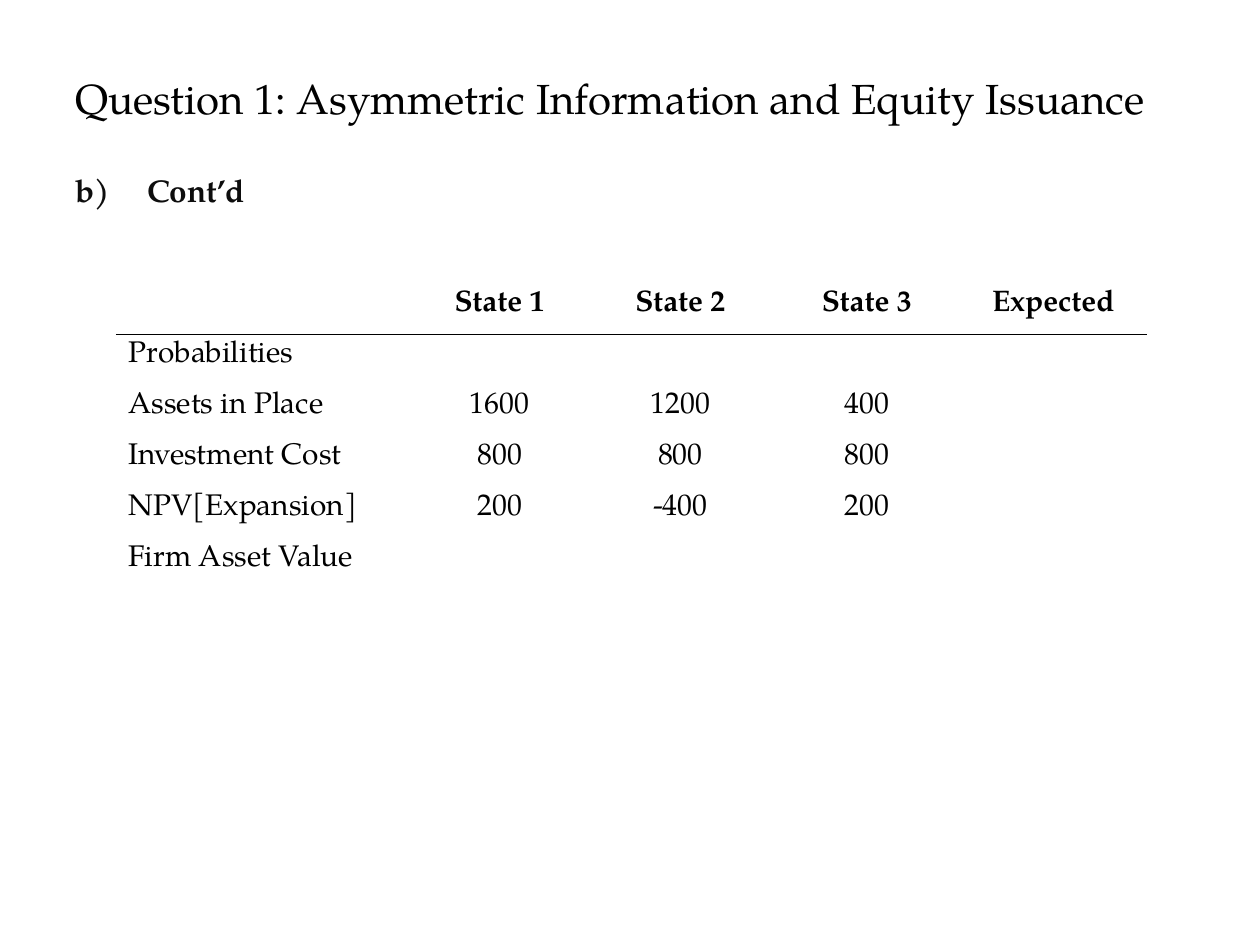
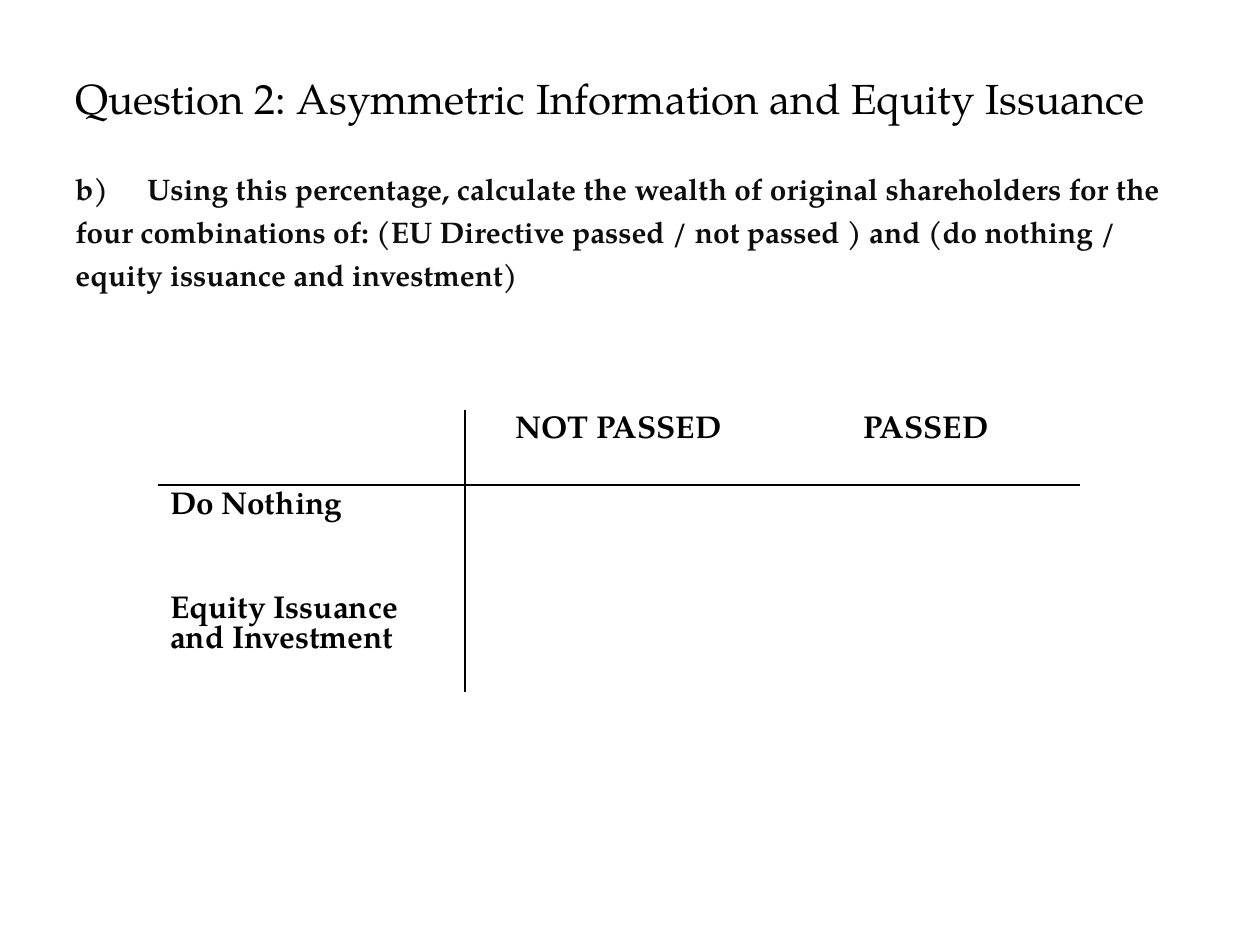
"""Build two exercise slides, each with a title, a question and a ruled table."""
from lxml import etree
from pptx import Presentation
from pptx.dml.color import RGBColor
from pptx.enum.text import MSO_ANCHOR, PP_ALIGN
from pptx.oxml.ns import qn
from pptx.util import Inches, Pt

LEFT, CENTER = PP_ALIGN.LEFT, PP_ALIGN.CENTER
TOP, MIDDLE = MSO_ANCHOR.TOP, MSO_ANCHOR.MIDDLE
W, H = Inches(10), Inches(7.5)
FONT = "TeX Gyre Pagella"
BLACK, INK = "000000", "0D0D0D"
NO_STYLE = "{2D5ABB26-0587-4C30-8999-92F81FD0307C}"


def style(p, size, color, bold=False, align=LEFT):
    """Set the font and alignment of a paragraph."""
    p.alignment = align
    p.font.name, p.font.size, p.font.bold = FONT, Pt(size), bold
    p.font.color.rgb = RGBColor.from_string(color)


def rule(cell, side):
    """Draw a thin black border on one side of a cell."""
    ln = etree.SubElement(cell._tc.get_or_add_tcPr(), qn("a:ln" + side), w=str(Pt(1)))
    fill = etree.SubElement(ln, qn("a:solidFill"))
    etree.SubElement(fill, qn("a:srgbClr"), val=BLACK)


slides = [
    dict(
        title="Question 1: Asymmetric Information and Equity Issuance",
        question="b)\tCont’d",
        question_size=18,
        left=0.92, top=2.25, size=17,
        cols=[2.35, 1.39] + [1.48] * 3,
        rows=[0.405] * 6,
        bold_labels=False, divider=False, last_anchor=TOP,
        cells=[
            ["", "State 1", "State 2", "State 3", "Expected"],
            ["Probabilities", "", "", "", ""],
            ["Assets in Place", "1600", "1200", "400", ""],
            ["Investment Cost", "800", "800", "800", ""],
            ["NPV[Expansion]", "200", "-400", "200", ""],
            ["Firm Asset Value", "", "", "", ""],
        ],
    ),
    dict(
        title="Question 2: Asymmetric Information and Equity Issuance",
        question="b)\tUsing this percentage, calculate the wealth of original "
                 "shareholders for the four combinations of: (EU Directive passed / "
                 "not passed ) and (do nothing / equity issuance and investment)",
        question_size=17,
        left=1.25, top=3.25, size=18,
        cols=[2.44] * 3,
        rows=[0.6, 0.6, 1.04],
        bold_labels=True, divider=True, last_anchor=MIDDLE,
        cells=[
            ["", "NOT PASSED", "PASSED"],
            ["Do Nothing", "", ""],
            ["Equity Issuance and Investment", "", ""],
        ],
    ),
]

prs = Presentation()
prs.slide_width, prs.slide_height = W, H

for d in slides:
    s = prs.slides.add_slide(prs.slide_layouts[6])

    for text, top, height, anchor in (
        (d["title"], 0.3, 0.95, MIDDLE),
        (d["question"], 1.25, 5.75, TOP),
    ):
        tf = s.shapes.add_textbox(int(W * 0.05), Inches(top), int(W * 0.9), Inches(height)).text_frame
        tf.word_wrap = True
        tf.vertical_anchor = anchor
        p = tf.paragraphs[0]
        p.add_run().text = text
        if anchor == MIDDLE:
            style(p, 24, BLACK)
        else:
            p.line_spacing = 1.2
            p.space_before = Pt(4)
            tabs = etree.SubElement(p._p.get_or_add_pPr(), qn("a:tabLst"))
            etree.SubElement(tabs, qn("a:tab"), pos=str(Inches(0.57)), algn="l")
            style(p, d["question_size"], INK, bold=True)

    n_rows, n_cols = len(d["rows"]), len(d["cols"])
    frame = s.shapes.add_table(n_rows, n_cols, Inches(d["left"]), Inches(d["top"]),
                               Inches(sum(d["cols"])), Inches(sum(d["rows"])))
    table = frame.table
    table.first_row = table.horz_banding = False
    table._tbl.tblPr.find(qn("a:tableStyleId")).text = NO_STYLE
    for c, width in enumerate(d["cols"]):
        table.columns[c].width = Inches(width)
    for r, height in enumerate(d["rows"]):
        table.rows[r].height = Inches(height)
        for c, text in enumerate(d["cells"][r]):
            cell = table.cell(r, c)
            p = cell.text_frame.paragraphs[0]
            if text:
                p.add_run().text = text
            style(p, d["size"], BLACK, r == 0 or d["bold_labels"], CENTER if c else LEFT)
            if d["divider"] and c == 0:
                rule(cell, "R")
            if r == 0:
                rule(cell, "B")
            cell.fill.background()
    table.cell(n_rows - 1, 0).vertical_anchor = d["last_anchor"]

prs.save("out.pptx")
